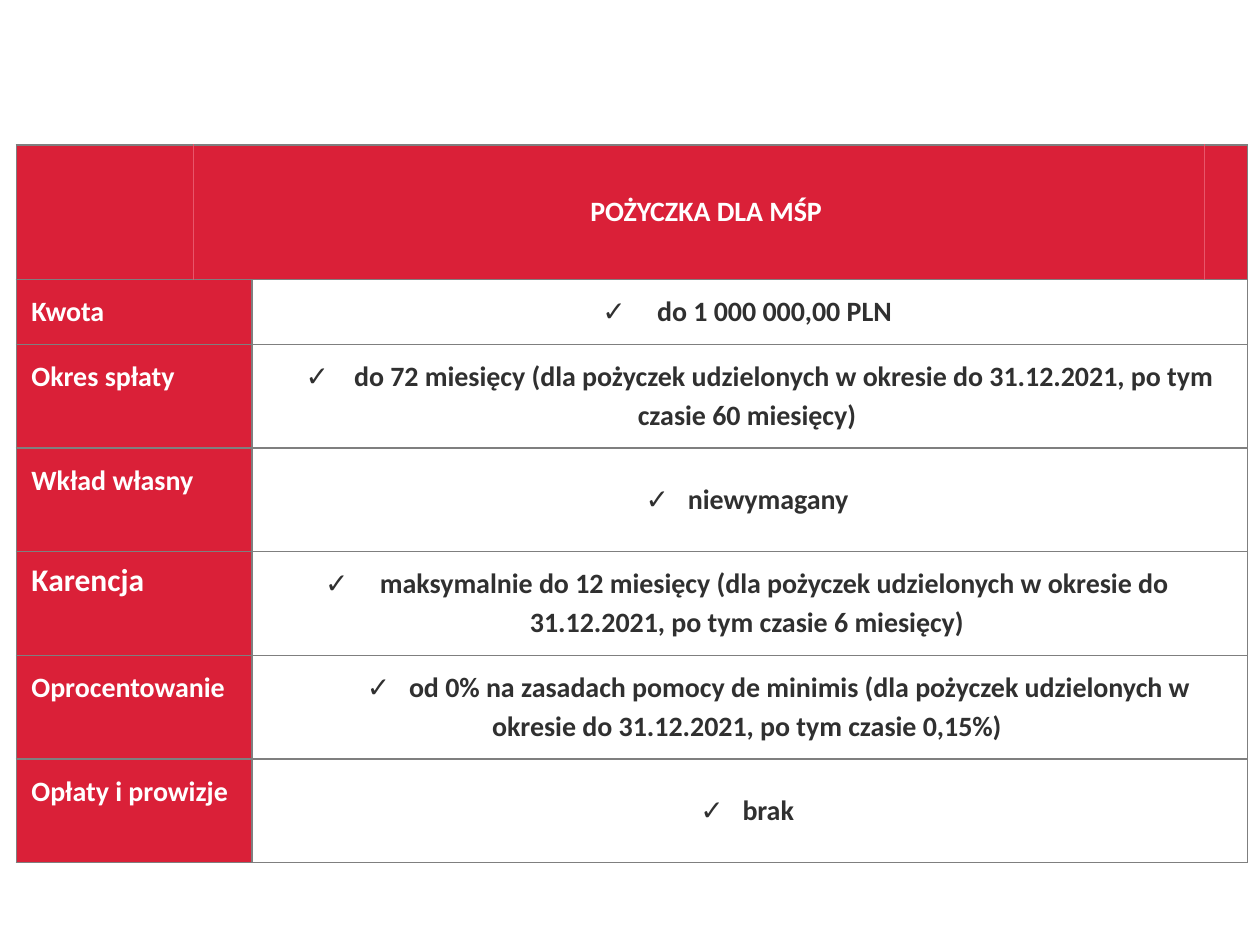
from dataclasses import dataclass

from lxml.etree import SubElement
from pptx import Presentation
from pptx.dml.color import RGBColor
from pptx.enum.text import MSO_ANCHOR as Anchor, PP_ALIGN as Align
from pptx.oxml.ns import qn
from pptx.util import Inches, Pt


@dataclass(frozen=True)
class Theme:
    font: str = "Calibri"
    red: str = "DA2038"
    pale_red: str = "E8566A"
    white: str = "FFFFFF"
    ink: str = "303030"
    border: str = "7F7F7F"
    body: int = 16
    large: int = 18


THEME = Theme()
MARGINS = {
    "margin_left": Inches(0.12),
    "margin_top": Inches(0.08),
    "margin_right": Inches(0.16),
    "margin_bottom": Inches(0.12),
}

# Label, label size, value, spacing after the check (pt), first-line indent (in)
TERMS = [
    ("Kwota", THEME.body, "do 1 000 000,00 PLN", 7.2, 0),
    ("Okres spłaty", THEME.body,
     "do 72 miesięcy (dla pożyczek udzielonych w okresie do 31.12.2021, "
     "po tym czasie 60 miesięcy)", 5.4, 0.2),
    ("Wkład własny", THEME.body, "niewymagany", 3.6, 0),
    ("Karencja", THEME.large,
     "maksymalnie do 12 miesięcy (dla pożyczek udzielonych w okresie do "
     "31.12.2021, po tym czasie 6 miesięcy)", 7.2, 0),
    ("Oprocentowanie", THEME.body,
     "od 0% na zasadach pomocy de minimis (dla pożyczek udzielonych w "
     "okresie do 31.12.2021, po tym czasie 0,15%)", 3.6, 0.5),
    ("Opłaty i prowizje", THEME.body, "brak", 3.6, 0),
]


def set_borders(cell, pale=()):
    """Draw the grey cell edges, with a pale hairline on the pale sides."""
    props = cell._tc.get_or_add_tcPr()
    for position, side in enumerate(("lnL", "lnR", "lnT", "lnB")):
        width, color = ((Pt(0.25), THEME.pale_red) if side in pale
                        else (Pt(1), THEME.border))
        line = props.makeelement(qn(f"a:{side}"), {"w": str(width)})
        props.insert(position, line)
        fill = SubElement(line, qn("a:solidFill"))
        SubElement(fill, qn("a:srgbClr"), val=color)


def style_cell(cell, fill, anchor=Anchor.TOP, pale=()):
    for name, value in MARGINS.items():
        setattr(cell, name, value)
    cell.vertical_anchor = anchor
    cell.fill.solid()
    cell.fill.fore_color.rgb = RGBColor.from_string(fill)
    set_borders(cell, pale)


def add_run(paragraph, text, color, size=THEME.body):
    run = paragraph.add_run()
    run.text = text
    looks = {"name": THEME.font, "size": Pt(size), "bold": True}
    for name, value in looks.items():
        setattr(run.font, name, value)
    run.font.color.rgb = RGBColor.from_string(color)
    return run


def start_paragraph(cell, align=Align.LEFT, spacing=1.15, left=0, indent=0):
    paragraph = cell.text_frame.paragraphs[0]
    paragraph.alignment = align
    paragraph.line_spacing = spacing
    props = paragraph._p.get_or_add_pPr()
    props.set("marL", str(Inches(left)))
    props.set("indent", str(Inches(indent)))
    return paragraph


def write_value(cell, value, gap, indent):
    """Write a check mark, set apart by letter spacing, and the value."""
    paragraph = start_paragraph(cell, Align.CENTER, indent=indent)
    check = add_run(paragraph, "✓ ", THEME.ink)
    check.font._element.set("spc", str(round(gap * 100)))
    add_run(paragraph, value, THEME.ink)


def add_grid(slide, box, widths, heights):
    """Add a plain table with the given column widths and row heights."""
    table = slide.shapes.add_table(len(heights), len(widths), *box).table
    table.first_row = table.horz_banding = False
    for column, width in zip(table.columns, widths):
        column.width = Inches(width)
    for row, height in zip(table.rows, heights):
        row.height = Inches(height)
    return table


def add_terms(slide, box):
    table = add_grid(slide, box, (1.87, 7.9), [0.51] + [0.82] * 5)
    for row, (label, size, value, gap, indent) in enumerate(TERMS):
        label_cell, value_cell = table.cell(row, 0), table.cell(row, 1)
        style_cell(label_cell, THEME.red)
        spacing = 1.0 if size == THEME.large else 1.15
        add_run(start_paragraph(label_cell, spacing=spacing),
                label, THEME.white, size)
        style_cell(value_cell, THEME.white, Anchor.MIDDLE)
        write_value(value_cell, value, gap, indent)


def add_header(slide, box):
    table = add_grid(slide, box, (1.4, 8.03, 0.34), (1.07,))
    inner_sides = (("lnR",), ("lnL", "lnR"), ("lnL",))
    for column, pale in enumerate(inner_sides):
        style_cell(table.cell(0, column), THEME.red, Anchor.MIDDLE, pale)
    title = start_paragraph(table.cell(0, 1), Align.CENTER, left=0.16)
    add_run(title, "POŻYCZKA DLA MŚP", THEME.white)


def main():
    deck = Presentation()
    deck.slide_width, deck.slide_height = Inches(10), Inches(7.5)
    slide = deck.slides.add_slide(deck.slide_layouts[6])
    left, width = Inches(0.13), Inches(9.77)
    # Loan terms, then the band above them
    add_terms(slide, (left, Inches(2.22), width, Inches(4.61)))
    add_header(slide, (left, Inches(1.15), width, Inches(1.07)))
    deck.save("out.pptx")


if __name__ == "__main__":
    main()
